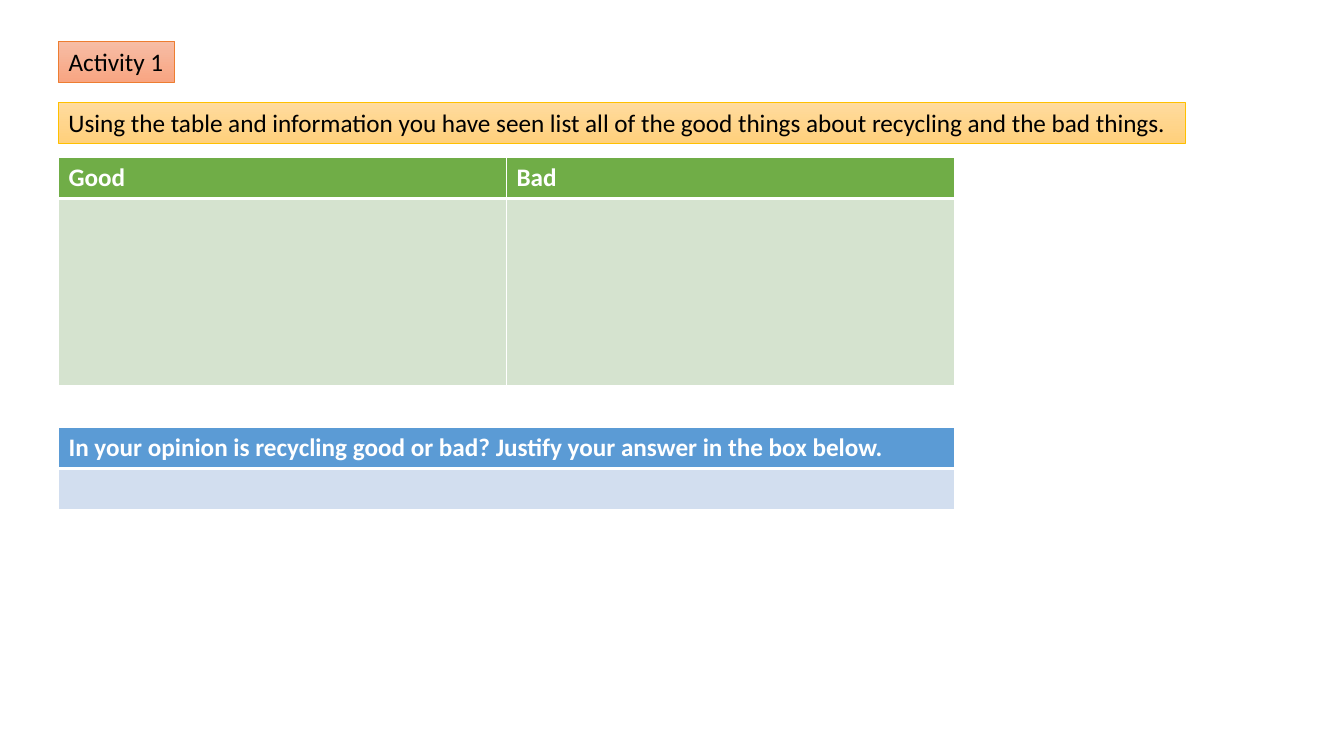
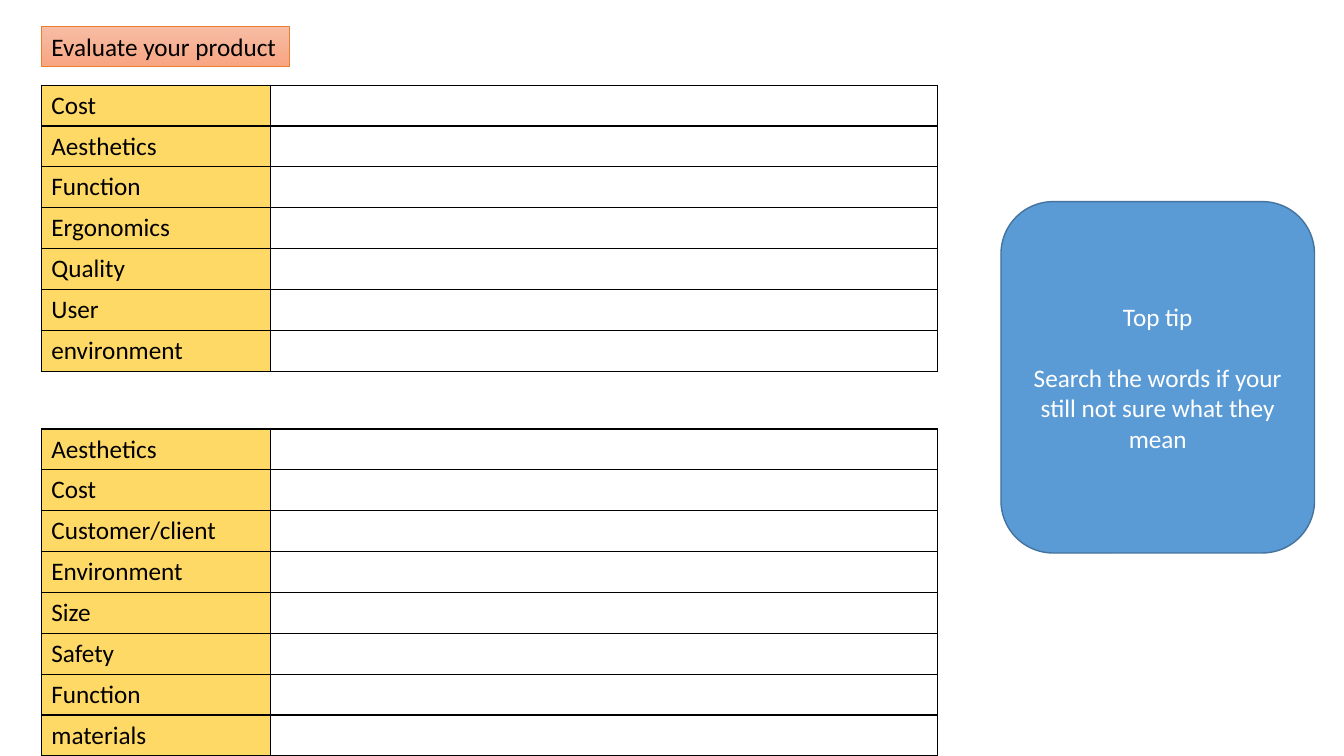
from dataclasses import dataclass

import pptx
import pptx.dml.color
import pptx.enum.shapes
import pptx.enum.text
import pptx.oxml
import pptx.oxml.ns
import pptx.presentation
import pptx.shapes.autoshape
import pptx.slide
import pptx.table
import pptx.text.text
import pptx.util

Pt = pptx.util.Pt
RGBColor = pptx.dml.color.RGBColor

BLACK = RGBColor(0x00, 0x00, 0x00)
WHITE = RGBColor(0xFF, 0xFF, 0xFF)
GREEN = RGBColor(0x70, 0xAD, 0x47)
PALE_GREEN = RGBColor(0xD5, 0xE3, 0xCF)
BLUE = RGBColor(0x5B, 0x9B, 0xD5)
PALE_BLUE = RGBColor(0xD2, 0xDE, 0xEF)
DARK_BLUE = RGBColor(0x43, 0x73, 0x9E)
YELLOW = RGBColor(0xFF, 0xD9, 0x66)
GOLD = RGBColor(0xFF, 0xC0, 0x00)
ORANGE = RGBColor(0xED, 0x7D, 0x31)
GOLD_BLEND = (RGBColor(0xFF, 0xDB, 0x9E), RGBColor(0xFF, 0xD0, 0x7C))
ORANGE_BLEND = (RGBColor(0xF7, 0xBD, 0xA5), RGBColor(0xF8, 0xA5, 0x82))

FONT = "Calibri"
FONT_SIZE = 18
TITLE_ONLY = 5
LABEL_HEIGHT = 29.2
ROW_HEIGHT = 29.2
TABLE_WIDTH = 640
CRITERIA_WIDTH = 164
ACTIVITY_LEFT = 41.8
EVALUATION_LEFT = 29.5


@dataclass(frozen=True)
class Label:
    text: str
    left: float
    top: float
    width: float
    blend: tuple[RGBColor, RGBColor]
    line: RGBColor


@dataclass(frozen=True)
class AnswerTable:
    top: float
    headings: tuple[str, ...]
    answer_height: float
    heading_fill: RGBColor
    answer_fill: RGBColor


@dataclass(frozen=True)
class CriteriaTable:
    top: float
    criteria: tuple[str, ...]


ACTIVITY_TITLE = Label("Activity 1", ACTIVITY_LEFT, 29.5, 83, ORANGE_BLEND, ORANGE)
INSTRUCTION = Label(
    "Using the table and information you have seen list all of the good things "
    "about recycling and the bad things.",
    ACTIVITY_LEFT, 73, 805, GOLD_BLEND, GOLD,
)
EVALUATION_TITLE = Label(
    "Evaluate your product", EVALUATION_LEFT, 18.5, 177, ORANGE_BLEND, ORANGE
)
ANSWER_TABLES = (
    AnswerTable(112.5, ("Good", "Bad"), 133.5, GREEN, PALE_GREEN),
    AnswerTable(
        305.5,
        ("In your opinion is recycling good or bad? Justify your answer in the box below.",),
        ROW_HEIGHT, BLUE, PALE_BLUE,
    ),
)
CRITERIA_TABLES = (
    CriteriaTable(
        60.8,
        ("Cost", "Aesthetics", "Function", "Ergonomics", "Quality", "User", "environment"),
    ),
    CriteriaTable(
        306.4,
        ("Aesthetics", "Cost", "Customer/client", "Environment", "Size", "Safety",
         "Function", "materials"),
    ),
)


def format_paragraph(
    paragraph: pptx.text.text._Paragraph, color: RGBColor, bold: bool = False
) -> None:
    font = paragraph.font
    font.name = FONT
    font.size = Pt(FONT_SIZE)
    font.bold = bold
    font.color.rgb = color


def format_label(shape: pptx.shapes.autoshape.Shape, label: Label) -> None:
    shape.left, shape.top = Pt(label.left), Pt(label.top)
    shape.width, shape.height = Pt(label.width), Pt(LABEL_HEIGHT)
    shape.shadow.inherit = False
    shape.fill.gradient()
    shape.fill.gradient_angle = 270
    for stop, color, position in zip(shape.fill.gradient_stops, label.blend, (0, 1)):
        stop.color.rgb = color
        stop.position = position
    shape.line.color.rgb = label.line
    shape.line.width = Pt(0.5)
    frame = shape.text_frame
    frame.text = label.text
    frame.word_wrap = True
    frame.margin_right = Pt(0)
    frame.auto_size = pptx.enum.text.MSO_AUTO_SIZE.NONE
    frame.vertical_anchor = pptx.enum.text.MSO_ANCHOR.TOP
    paragraph = frame.paragraphs[0]
    paragraph.alignment = pptx.enum.text.PP_ALIGN.LEFT
    format_paragraph(paragraph, BLACK)


def add_titled_slide(
    presentation: pptx.presentation.Presentation, title: Label
) -> pptx.slide.Slide:
    slide = presentation.slides.add_slide(presentation.slide_layouts[TITLE_ONLY])
    format_label(slide.shapes.title, title)
    return slide


def add_plain_table(
    slide: pptx.slide.Slide, left: float, top: float,
    widths: list[float], heights: list[float],
) -> pptx.table.Table:
    table = slide.shapes.add_table(
        len(heights), len(widths), Pt(left), Pt(top), Pt(sum(widths)), Pt(sum(heights))
    ).table
    table.first_row = False
    table.horz_banding = False
    for column, width in zip(table.columns, widths):
        column.width = Pt(width)
    for row, height in zip(table.rows, heights):
        row.height = Pt(height)
    return table


def format_cell(
    cell: pptx.table._Cell, text: str, fill: RGBColor | None, color: RGBColor,
    border: RGBColor, bold: bool = False, top: float = 1, bottom: float = 1,
) -> None:
    properties = cell._tc.get_or_add_tcPr()
    for side, width in (("L", 1), ("R", 1), ("T", top), ("B", bottom)):
        properties.append(pptx.oxml.parse_xml(
            f'<a:ln{side} {pptx.oxml.ns.nsdecls("a")} w="{Pt(width)}">'
            f'<a:solidFill><a:srgbClr val="{border}"/></a:solidFill></a:ln{side}>'
        ))
    if fill is None:
        cell.fill.background()
    else:
        cell.fill.solid()
        cell.fill.fore_color.rgb = fill
    cell.text = text
    format_paragraph(cell.text_frame.paragraphs[0], color, bold)


def add_answer_table(slide: pptx.slide.Slide, answers: AnswerTable) -> None:
    count = len(answers.headings)
    table = add_plain_table(
        slide, ACTIVITY_LEFT, answers.top,
        [TABLE_WIDTH / count] * count, [ROW_HEIGHT, answers.answer_height],
    )
    for column, heading in enumerate(answers.headings):
        format_cell(table.cell(0, column), heading, answers.heading_fill, WHITE, WHITE,
                    bold=True, bottom=3)
        format_cell(table.cell(1, column), "", answers.answer_fill, BLACK, WHITE, top=3)


def add_criteria_table(slide: pptx.slide.Slide, evaluation: CriteriaTable) -> None:
    table = add_plain_table(
        slide, EVALUATION_LEFT, evaluation.top,
        [CRITERIA_WIDTH, TABLE_WIDTH - CRITERIA_WIDTH],
        [ROW_HEIGHT] * len(evaluation.criteria),
    )
    for row, criterion in enumerate(evaluation.criteria):
        format_cell(table.cell(row, 0), criterion, YELLOW, BLACK, BLACK)
        format_cell(table.cell(row, 1), "", None, BLACK, BLACK)


def add_tip(slide: pptx.slide.Slide) -> None:
    shape = slide.shapes.add_shape(
        pptx.enum.shapes.MSO_SHAPE.ROUNDED_RECTANGLE, Pt(715), Pt(144), Pt(224), Pt(251)
    )
    shape.shadow.inherit = False
    shape.fill.solid()
    shape.fill.fore_color.rgb = BLUE
    shape.line.color.rgb = DARK_BLUE
    shape.line.width = Pt(1)
    frame = shape.text_frame
    frame.word_wrap = True
    frame.vertical_anchor = pptx.enum.text.MSO_ANCHOR.MIDDLE
    frame.text = "Top tip\nSearch the words if your still not sure what they mean"
    for paragraph in frame.paragraphs:
        paragraph.alignment = pptx.enum.text.PP_ALIGN.CENTER
        format_paragraph(paragraph, WHITE)
    frame.paragraphs[0].space_after = Pt(22)


def main() -> None:
    presentation = pptx.Presentation()
    presentation.slide_width, presentation.slide_height = Pt(960), Pt(540)

    activity = add_titled_slide(presentation, ACTIVITY_TITLE)
    instruction = activity.shapes.add_shape(
        pptx.enum.shapes.MSO_SHAPE.RECTANGLE, Pt(0), Pt(0), Pt(0), Pt(0)
    )
    format_label(instruction, INSTRUCTION)
    for answers in ANSWER_TABLES:
        add_answer_table(activity, answers)

    evaluation = add_titled_slide(presentation, EVALUATION_TITLE)
    for criteria in CRITERIA_TABLES:
        add_criteria_table(evaluation, criteria)
    add_tip(evaluation)

    presentation.save("out.pptx")


if __name__ == "__main__":
    main()
